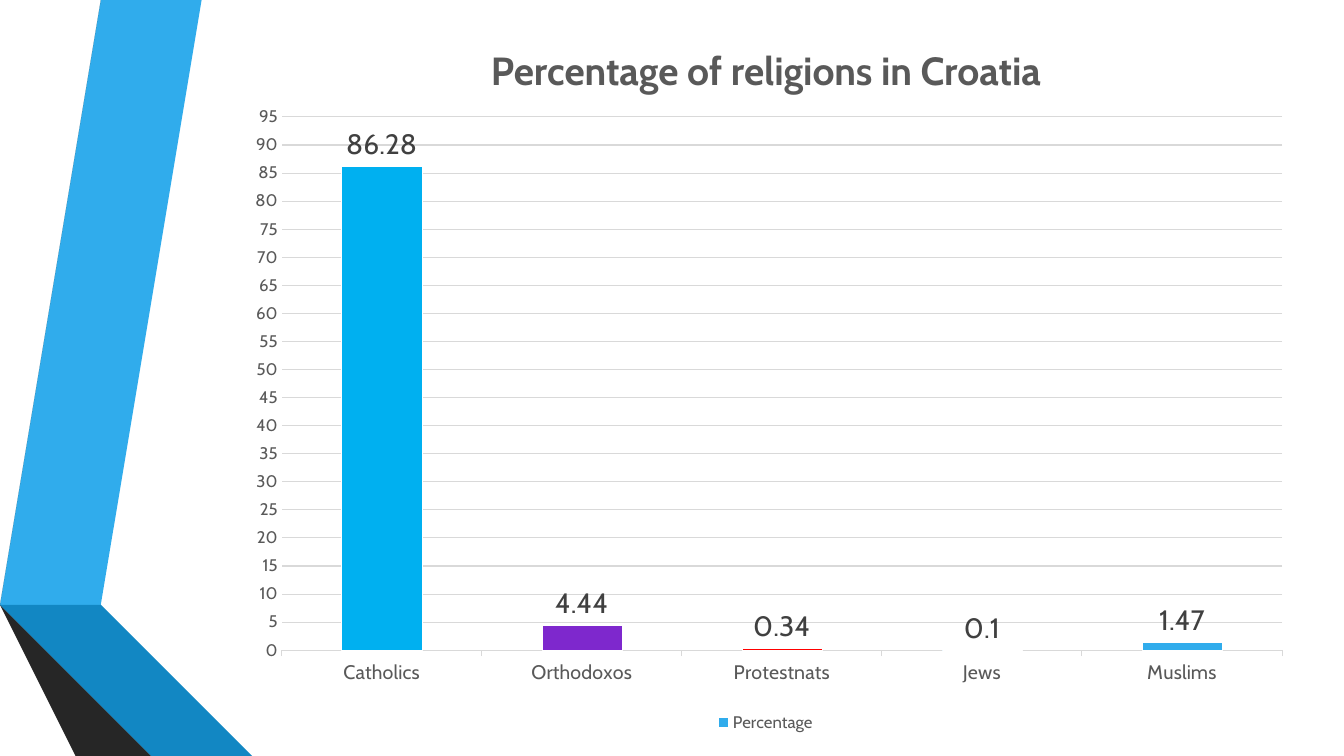
from dataclasses import dataclass

from lxml import etree
from pptx import Presentation
from pptx.chart.data import CategoryChartData
from pptx.dml.color import RGBColor
from pptx.enum.chart import XL_CHART_TYPE as ChartType
from pptx.enum.chart import XL_LABEL_POSITION as LabelPosition
from pptx.enum.chart import XL_LEGEND_POSITION as LegendPosition
from pptx.enum.chart import XL_TICK_MARK as TickMark
from pptx.oxml import parse_xml
from pptx.util import Inches, Pt


@dataclass(frozen=True)
class Theme:
    font: str = "Cabin"
    text: str = "595959"
    label_text: str = "404040"
    grid: str = "D9D9D9"
    white: str = "FFFFFF"
    blue: str = "30ACEC"
    blue_shade: str = "1287C3"
    blue_edge: str = "0C5A82"
    gray: str = "595959"
    gray_shade: str = "404040"
    gray_edge: str = "262626"
    bars: tuple = ("00B0F0", "7E28CD", "FF0000")
    title_size: int = 28
    label_size: int = 20
    category_size: int = 14
    small_size: int = 12


theme = Theme()


def set_font(font, size, color, bold=False):
    font.name = theme.font
    font.size = Pt(size)
    font.bold = bold
    font.color.rgb = RGBColor.from_string(color)


def set_line(line, color, width):
    line.color.rgb = RGBColor.from_string(color)
    line.width = Pt(width)


presentation = Presentation()
presentation.slide_width = Inches(13.33)
presentation.slide_height = Inches(7.5)
slide = presentation.slides.add_slide(presentation.slide_layouts[6])

# Folded ribbons on the left, from back to front
ribbons = [
    (theme.blue, [(0.5, 5.78), (0.77, 5.83), (1.73, 0), (1.45, 0)]),
    (theme.gray, [(1.39, 0), (1.11, 0), (0.16, 5.73), (0.44, 5.77)]),
    (theme.gray_edge, [(0.16, 5.73), (1.45, 7.5), (1.51, 7.5)]),
    (theme.blue_edge, [(0.5, 5.79), (2.08, 7.5), (2.14, 7.5)]),
    (theme.blue_shade, [(0.5, 5.78), (2.14, 7.5), (2.83, 7.5), (0.77, 5.83)]),
    (theme.gray_shade, [(2.02, 7.5), (0.48, 5.83), (0.44, 5.77), (0.16, 5.73), (1.51, 7.5)]),
]
for color, points in ribbons:
    builder = slide.shapes.build_freeform(*points[0], scale=Inches(1))
    builder.add_line_segments(points[1:], close=True)
    ribbon = builder.convert_to_shape()
    ribbon.shadow.inherit = False
    ribbon.fill.solid()
    ribbon.fill.fore_color.rgb = RGBColor.from_string(color)
    ribbon.line.fill.background()

# Column chart
chart_data = CategoryChartData()
chart_data.categories = ["Catholics", "Orthodoxos", "Protestnats", "Jews", "Muslims"]
chart_data.add_series("Percentage", [86.28, 4.44, 0.34, 0.1, 1.47])
chart = slide.shapes.add_chart(
    ChartType.COLUMN_CLUSTERED,
    Inches(2.26), Inches(0.16), Inches(10.67), Inches(7.15), chart_data,
).chart
set_font(chart.font, theme.small_size, theme.text)

# Chart title and legend
chart.has_title = True
title = chart.chart_title.text_frame
title.text = "Percentage of religions in Croatia"
set_font(title.paragraphs[0].font, theme.title_size, theme.text, bold=True)
chart.has_legend = True
chart.legend.position = LegendPosition.BOTTOM
chart.legend.include_in_layout = False
set_font(chart.legend.font, theme.small_size, theme.text)

# Axes
category_axis = chart.category_axis
category_axis.major_tick_mark = TickMark.OUTSIDE
set_font(category_axis.tick_labels.font, theme.category_size, theme.text)
set_line(category_axis.format.line, theme.grid, 0.75)

value_axis = chart.value_axis
value_axis.minimum_scale = 0
value_axis.maximum_scale = 95
value_axis.major_unit = 5
value_axis.major_tick_mark = TickMark.NONE
set_font(value_axis.tick_labels.font, theme.small_size, theme.text)
value_axis.format.line.fill.background()
set_line(value_axis.major_gridlines.format.line, theme.grid, 0.75)

# Bars: series colour, with the first three bars coloured singly
plot = chart.plots[0]
plot.gap_width = 150
plot.vary_by_categories = False
series = plot.series[0]
bar_formats = [series.format] + [series.points[i].format for i in range(len(theme.bars))]
for bar_format, color in zip(bar_formats, (theme.blue, *theme.bars)):
    bar_format.fill.solid()
    bar_format.fill.fore_color.rgb = RGBColor.from_string(color)
    set_line(bar_format.line, theme.white, 0.25)

# Value labels
labels = series.data_labels
labels.show_value = True
labels.position = LabelPosition.OUTSIDE_END
set_font(labels.font, theme.label_size, theme.label_text)

# Fixed inner plot area, as fractions of the chart
namespace = "http://schemas.openxmlformats.org/drawingml/2006/chart"
plot_area = chart.element.find(f".//{{{namespace}}}plotArea")
for old_layout in plot_area.findall(f"{{{namespace}}}layout"):
    plot_area.remove(old_layout)
layout = parse_xml(f'<c:layout xmlns:c="{namespace}"/>')
manual = etree.SubElement(layout, f"{{{namespace}}}manualLayout")
for tag, value in [("layoutTarget", "inner"), ("xMode", "edge"), ("yMode", "edge"),
                   ("x", "0.05"), ("y", "0.14"), ("w", "0.93"), ("h", "0.74")]:
    etree.SubElement(manual, f"{{{namespace}}}{tag}").set("val", value)
plot_area.insert(0, layout)

presentation.save("out.pptx")
